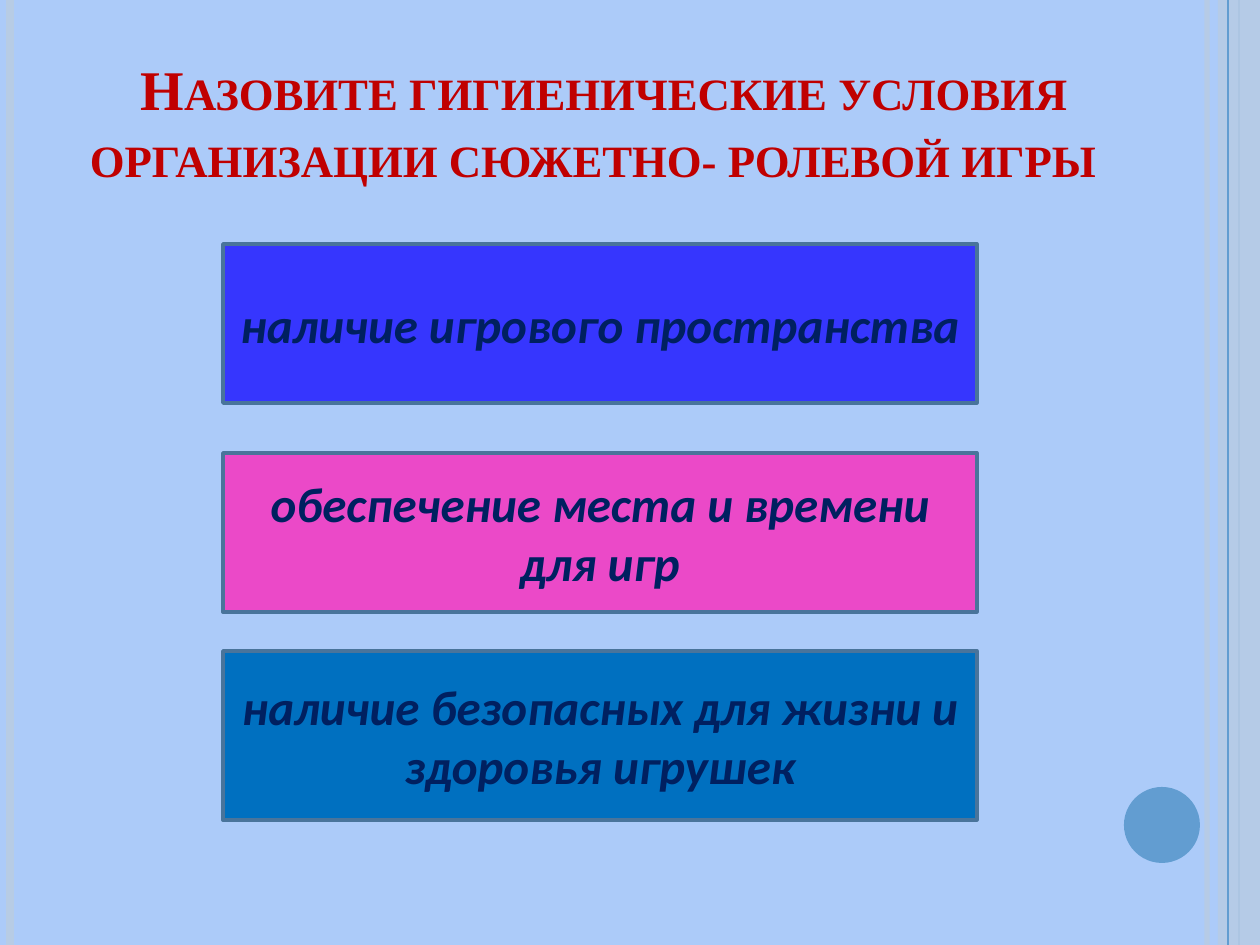
import pptx
import pptx.util
import pptx.dml.color
import pptx.enum.shapes
import pptx.enum.text
import pptx.oxml.ns
import lxml.etree

KIND = pptx.enum.shapes.MSO_SHAPE
ANCHOR = pptx.enum.text.MSO_ANCHOR
CENTER = pptx.enum.text.PP_ALIGN.CENTER

WIDE, HIGH = 1260, 945
BACK, PALE, BLUE, EDGE = "ACCBF9", "B7CCE5", "629DD1", "49749B"
TITLE = "Назовите гигиенические условия организации сюжетно- ролевой игры  "
CARDS = [
    ("наличие игрового пространства", "3636FE", 244, 159),
    ("обеспечение места и времени для игр", "EB49C8", 453, 159),
    ("наличие безопасных для жизни и здоровья игрушек", "0070C0", 651, 169),
]
LEFT, SPAN = 223, 754
RULES = [(1207, PALE, 3, 93), (10, PALE, 4.5, 100), (1239, BLUE, 1.5, 100)]
BAND = (1218, 0, 42, HIGH)
SEAM = (1228, BLUE, 0.75, 100)
DOT = (1124, 787, 76, 76)


def px(n):
    return round(n * 914400 / 126)


def paint(fill, tone, alpha=100):
    fill.solid()
    fill.fore_color.rgb = pptx.dml.color.RGBColor.from_string(tone)
    if alpha < 100:
        clr = fill._xPr.find(".//" + pptx.oxml.ns.qn("a:srgbClr"))
        node = lxml.etree.SubElement(clr, pptx.oxml.ns.qn("a:alpha"))
        node.set("val", str(alpha * 1000))


def rule(slide, x, tone, width, alpha):
    line = slide.shapes.add_connector(
        pptx.enum.shapes.MSO_CONNECTOR.STRAIGHT, px(x), 0, px(x), px(HIGH))
    line.line.width = pptx.util.Pt(width)
    paint(line.line.fill, tone, alpha)
    lxml.etree.SubElement(line._element.spPr, pptx.oxml.ns.qn("a:effectLst"))


def block(slide, kind, box, tone, alpha=100):
    shape = slide.shapes.add_shape(kind, *map(px, box))
    shape.shadow.inherit = False
    paint(shape.fill, tone, alpha)
    shape.line.fill.background()
    return shape


def write(shape, text, size, face, tone, anchor, italic=False):
    frame = shape.text_frame
    frame.word_wrap = True
    frame.vertical_anchor = anchor
    para = frame.paragraphs[0]
    para.alignment = CENTER
    run = para.add_run()
    run.text = text
    font = para.font
    font.size, font.name = pptx.util.Pt(size), face
    font.bold, font.italic = True, italic
    paint(font.fill, tone)
    return run


def main():
    deck = pptx.Presentation()
    deck.slide_width, deck.slide_height = px(WIDE), px(HIGH)
    slide = deck.slides.add_slide(deck.slide_layouts[6])
    paint(slide.background.fill, BACK)

    for item in RULES:
        rule(slide, *item)
    block(slide, KIND.RECTANGLE, BAND, PALE, 87)
    rule(slide, *SEAM)
    block(slide, KIND.OVAL, DOT, BLUE)

    head = slide.shapes.add_textbox(px(63), px(38), px(1082), px(157))
    run = write(head, TITLE, 32, "Times New Roman", "C00000", ANCHOR.BOTTOM)
    run._r.get_or_add_rPr().set("cap", "small")

    for text, tone, top, tall in CARDS:
        card = block(slide, KIND.RECTANGLE, (LEFT, top, SPAN, tall), tone)
        card.line.width = pptx.util.Pt(2)
        paint(card.line.fill, EDGE)
        write(card, text, 28, "Calibri", "002060", ANCHOR.MIDDLE, True)

    deck.save("out.pptx")


if __name__ == "__main__":
    main()
